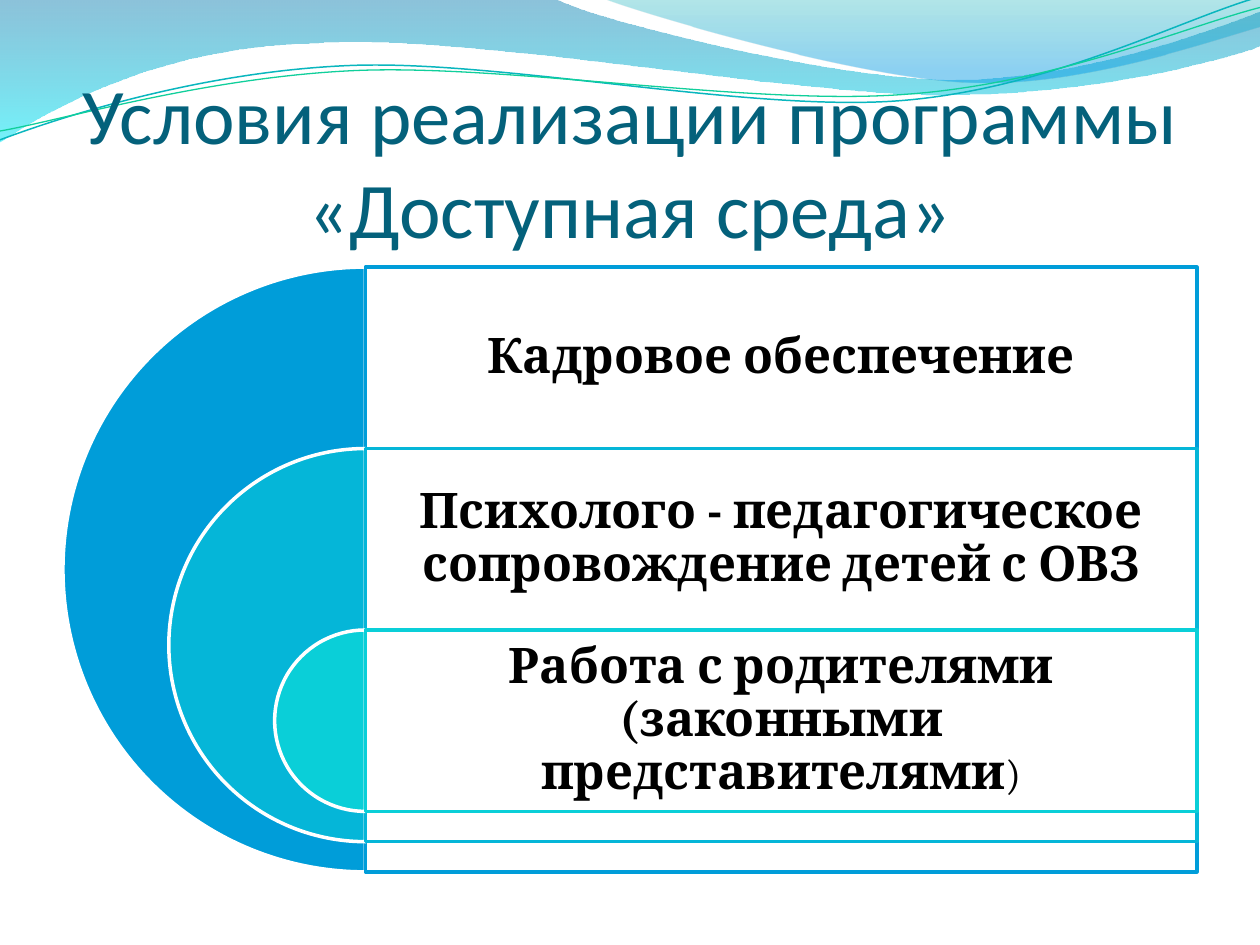
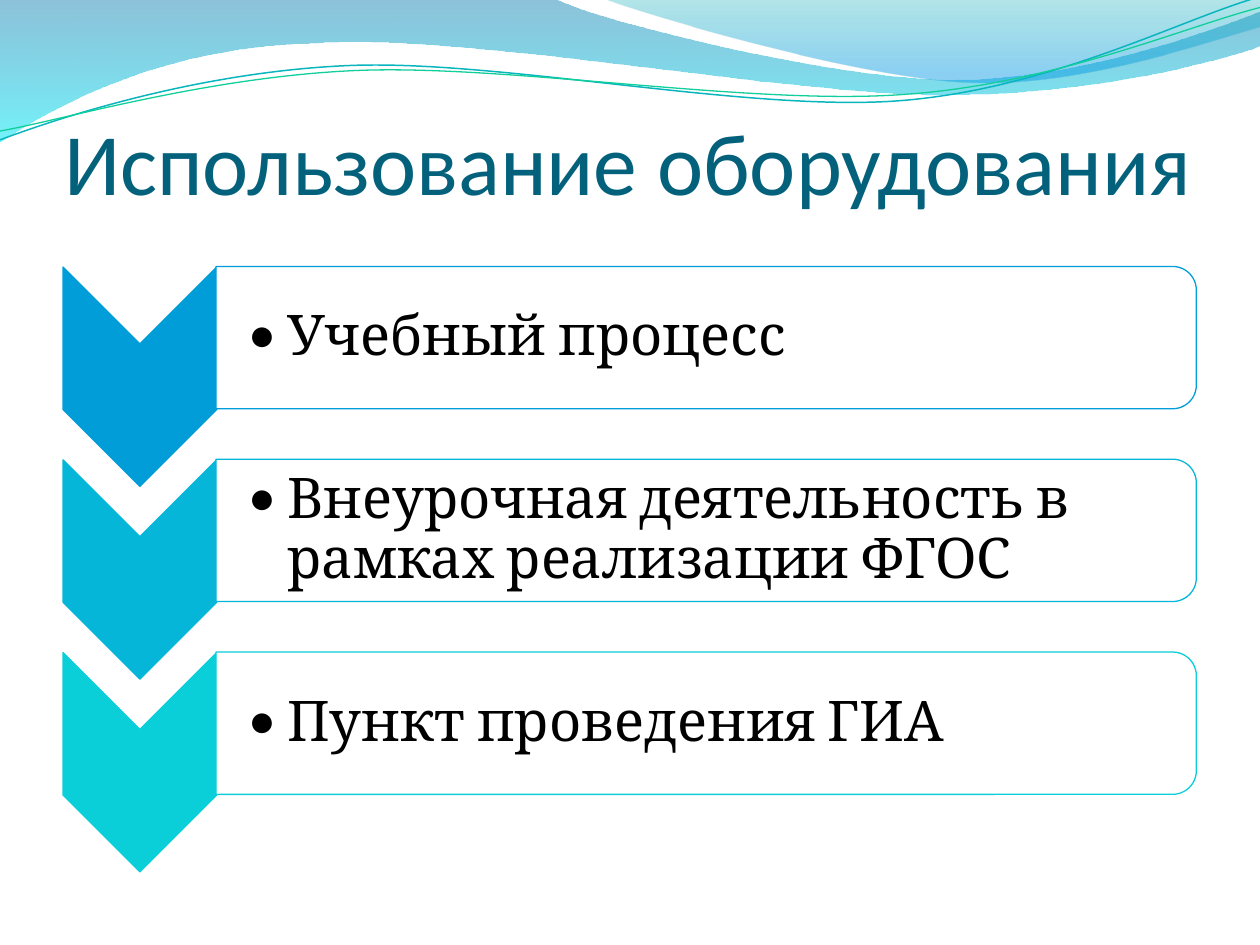
import math
from dataclasses import dataclass

import pptx
import pptx.dml.color
import pptx.enum.shapes
import pptx.enum.text
import pptx.oxml
import pptx.oxml.ns
import pptx.util
from pptx.util import Inches

SHAPE = pptx.enum.shapes.MSO_SHAPE
ALIGN = pptx.enum.text.PP_ALIGN
ANCHOR = pptx.enum.text.MSO_ANCHOR
COLORS = {
    "title": "04617B", "text": "000000", "white": "FFFFFF",
    "blue": "009DD9", "cyan": "05B6D8", "aqua": "0ACFD8",
    "deep": "0079AD", "bright": "00E9F7", "sea": "00ABB4", "sky": "0099E4",
    "teal_line": "09B6BE", "green_line": "10CF9B",
}
STEP_COLORS = ("blue", "cyan", "aqua")
TITLE_FONT, BODY_FONT = "Calibri", "Cambria"


@dataclass(frozen=True)
class GradientStop:
    position: float
    color: str
    opacity: int


@dataclass(frozen=True)
class Wave:
    """Start point, then segments: a point is a line, three points a curve."""
    start: tuple
    segments: tuple
    stops: tuple = ()
    line: str = ""
    line_width: float = 0
    rotation: float = 0
    center: tuple = (0, 0)


@dataclass(frozen=True)
class Ring:
    label: str
    size: float
    tail: str = ""


WAVES = (
    Wave((0, 0), (
        ((4.4, -0.01),),
        ((4.76, 0.17), (6.64, 0.63), (7.58, 0.63)),
        ((8.53, 0.63), (9.58, 0.26), (10, 0.09)),
        ((10.01, 0.36),),
        ((9.83, 0.44), (8.7, 0.76), (7.46, 0.75)),
        ((6.22, 0.75), (3.82, 0.28), (2.57, 0.34)),
        ((1.29, 0.36), (0.46, 0.83), (-0.01, 1.13)),
        ((0, 0),),
    ), stops=(GradientStop(0, "deep", 45), GradientStop(1, "bright", 55))),
    Wave((4.79, -0.01), (
        ((5.09, 0.11), (6.82, 0.62), (7.69, 0.65)),
        ((8.56, 0.69), (9.61, 0.32), (10, 0.21)),
        ((10, 0),),
        ((4.79, -0.01),),
    ), stops=(GradientStop(0, "sea", 30), GradientStop(0.8, "sky", 45))),
    Wave((0, 1.11), (
        ((0.48, 0.93), (1.58, 0.57), (2.77, 0.52)),
        ((3.95, 0.47), (5.93, 0.89), (7.13, 0.8)),
        ((8.33, 0.71), (9.38, 0.15), (9.98, -0.02)),
    ), line="teal_line", line_width=0.85, rotation=357.3, center=(4.99, 0.58)),
    Wave((0, 1.04), (
        ((0.47, 0.96), (1.64, 0.61), (2.83, 0.56)),
        ((4.03, 0.51), (5.97, 0.84), (7.17, 0.75)),
        ((8.36, 0.67), (9.41, 0.21), (10, 0.06)),
    ), line="green_line", line_width=0.75, rotation=357.3, center=(5, 0.59)),
)
RINGS = (
    Ring("Кадровое обеспечение", 4.8),
    Ring("Психолого - педагогическое сопровождение детей с ОВЗ", 3.12),
    Ring("Работа с родителями (законными представителями", 1.44, tail=")"),
)
EQUIPMENT_USES = (
    "Учебный процесс",
    "Внеурочная деятельность в рамках реализации ФГОС",
    "Пункт проведения ГИА",
)


# Shared helpers
def rgb(name: str) -> pptx.dml.color.RGBColor:
    return pptx.dml.color.RGBColor.from_string(COLORS[name])


def set_opacity(color_parent, percent: int) -> None:
    """Add an alpha value to the first RGB colour below an element."""
    color = next(color_parent.iter(pptx.oxml.ns.qn("a:srgbClr")))
    alpha = pptx.oxml.parse_xml(f'<a:alpha {pptx.oxml.ns.nsdecls("a")} val="{percent * 1000}"/>')
    color.append(alpha)


def add_shape(slide, kind, box: tuple, fill: str, line: str, line_width: float,
              adjustments: tuple = (), rotation: float = 0, opacity: int = 100):
    shape = slide.shapes.add_shape(kind, *map(Inches, box))
    shape.shadow.inherit = False
    shape.rotation = rotation
    for index, value in enumerate(adjustments):
        shape.adjustments[index] = value
    shape.fill.solid()
    shape.fill.fore_color.rgb = rgb(fill)
    if opacity < 100:
        set_opacity(shape.element.spPr, opacity)
    shape.line.color.rgb = rgb(line)
    shape.line.width = pptx.util.Pt(line_width)
    return shape


def set_frame(frame, insets: tuple, anchor) -> None:
    frame.auto_size = pptx.enum.text.MSO_AUTO_SIZE.NONE
    frame.word_wrap = True
    frame.vertical_anchor = anchor
    (frame.margin_left, frame.margin_top,
     frame.margin_right, frame.margin_bottom) = map(Inches, insets)


def format_run(run, font: str, size: float, color: str, bold: bool = False) -> None:
    run.font.name = font
    run.font.size = pptx.util.Pt(size)
    run.font.bold = bold
    run.font.color.rgb = rgb(color)


def add_label(slide, box: tuple, insets: tuple, text: str, size: float, bold: bool = False):
    frame = slide.shapes.add_textbox(*map(Inches, box)).text_frame
    set_frame(frame, insets, ANCHOR.MIDDLE)
    paragraph = frame.paragraphs[0]
    paragraph.text = text
    paragraph.line_spacing = 0.9
    format_run(paragraph.runs[0], BODY_FONT, size, "text", bold)
    return paragraph


def add_bullet(paragraph, indent: float) -> None:
    paragraph.level = 1
    properties = paragraph._p.get_or_add_pPr()
    properties.set("marL", str(Inches(indent)))
    properties.set("indent", str(-Inches(indent)))
    namespace = pptx.oxml.ns.nsdecls("a")
    for xml in (f'<a:buClr {namespace}><a:srgbClr val="{COLORS["text"]}"/></a:buClr>',
                f'<a:buFont {namespace} typeface="{TITLE_FONT}"/>',
                f'<a:buChar {namespace} char="•"/>'):
        properties.append(pptx.oxml.parse_xml(xml))


def add_titled_slide(presentation, layout, title: str, position: tuple, size: float, alignment):
    slide = presentation.slides.add_slide(layout)
    shape = slide.shapes.title
    shape.left, shape.top, shape.width, shape.height = map(Inches, (*position, 9, 1.25))
    set_frame(shape.text_frame, (0, 0.05, 0, 0), ANCHOR.BOTTOM)
    shape.text_frame.text = title
    paragraph = shape.text_frame.paragraphs[0]
    paragraph.alignment = alignment
    format_run(paragraph.runs[0], TITLE_FONT, size, "title")
    return slide


# Wave band of the layout
def unrotate(point: tuple, wave: Wave) -> tuple:
    """Turn a point back, so that the shape's rotation brings it into place."""
    angle = math.radians(-wave.rotation)
    x, y = point[0] - wave.center[0], point[1] - wave.center[1]
    return (Inches(wave.center[0] + x * math.cos(angle) - y * math.sin(angle)),
            Inches(wave.center[1] + x * math.sin(angle) + y * math.cos(angle)))


def bend_segments(shape, segments: tuple) -> None:
    """Join the line points of every three-point segment into one cubic curve."""
    lines = iter(list(shape.element.iter(pptx.oxml.ns.qn("a:lnTo"))))
    for segment in segments:
        parts = [next(lines) for _ in segment]
        if len(parts) == 3:
            curve = pptx.oxml.parse_xml(f'<a:cubicBezTo {pptx.oxml.ns.nsdecls("a")}/>')
            parts[0].addprevious(curve)
            for part in parts:
                curve.append(part[0])
                part.getparent().remove(part)


def add_wave(slide, wave: Wave):
    points = [wave.start, *(point for segment in wave.segments for point in segment)]
    corners = [unrotate(point, wave) for point in points]
    builder = slide.shapes.build_freeform(*corners[0])
    builder.add_line_segments(corners[1:], close=bool(wave.stops))
    shape = builder.convert_to_shape()
    bend_segments(shape, wave.segments)
    shape.rotation = wave.rotation
    shape.shadow.inherit = False
    if wave.stops:
        shape.line.fill.background()
        shape.fill.gradient()
        shape.fill.gradient_angle = 270
        elements = shape.element.spPr.iter(pptx.oxml.ns.qn("a:gs"))
        for gradient_stop, stop, element in zip(shape.fill.gradient_stops, wave.stops, list(elements)):
            gradient_stop.position = stop.position
            gradient_stop.color.rgb = rgb(stop.color)
            set_opacity(element, stop.opacity)
    else:
        shape.fill.background()
        shape.line.color.rgb = rgb(wave.line)
        shape.line.width = pptx.util.Pt(wave.line_width)
    return shape


def move_waves_to_layout(slide, layout) -> None:
    """Draw the waves once and let every slide of the layout show them."""
    for wave in WAVES:
        layout.shapes.element.append(add_wave(slide, wave).element)


# Slide 1: nested half circles with their panels
def draw_rings(slide) -> None:
    panel_left, panel_width, first_top, row_height = 2.9, 6.6, 2.12, 1.44
    for row, (ring, color) in enumerate(zip(RINGS, STEP_COLORS)):
        top = first_top + row * row_height
        add_shape(slide, SHAPE.PIE, (panel_left - ring.size / 2, top, ring.size, ring.size),
                  color, "white", 2, adjustments=(54, 162))
        add_shape(slide, SHAPE.RECTANGLE, (panel_left, top, panel_width, ring.size),
                  "white", color, 2, opacity=90)
        paragraph = add_label(slide, (panel_left, top, panel_width, row_height),
                              (0.12,) * 4, ring.label, 28, bold=True)
        paragraph.alignment = ALIGN.CENTER
        if ring.tail:
            run = paragraph.add_run()
            run.text = ring.tail
            format_run(run, BODY_FONT, 24, "text")


# Slide 2: chevrons with their bulleted panels
def draw_chevrons(slide) -> None:
    row_step = 1.53
    for row, (label, color) in enumerate(zip(EQUIPMENT_USES, STEP_COLORS)):
        offset = row * row_step
        add_shape(slide, SHAPE.CHEVRON, (0.24, 2.38 + offset, 1.74, 1.22),
                  color, color, 0.75, adjustments=(0.5,), rotation=90)
        add_shape(slide, SHAPE.ROUND_2_SAME_RECTANGLE, (5.04, -1.21 + offset, 1.13, 7.78),
                  "white", color, 0.75, adjustments=(0.167, 0), rotation=90, opacity=90)
        paragraph = add_label(slide, (1.72, 2.17 + offset, 7.73, 1.02),
                              (0.25, 0.02, 0.02, 0.02), label, 32)
        add_bullet(paragraph, 0.31)


def main() -> None:
    presentation = pptx.Presentation()
    presentation.slide_width, presentation.slide_height = Inches(10), Inches(7.5)
    layout = presentation.slide_layouts.get_by_name("Title Only")

    conditions = add_titled_slide(presentation, layout,
                                  "Условия реализации программы «Доступная среда»",
                                  (0.5, 0.77), 45, ALIGN.CENTER)
    move_waves_to_layout(conditions, layout)
    draw_rings(conditions)

    equipment = add_titled_slide(presentation, layout, "Использование оборудования",
                                 (0.51, 0.44), 50, ALIGN.LEFT)
    draw_chevrons(equipment)
    presentation.save("out.pptx")


if __name__ == "__main__":
    main()
